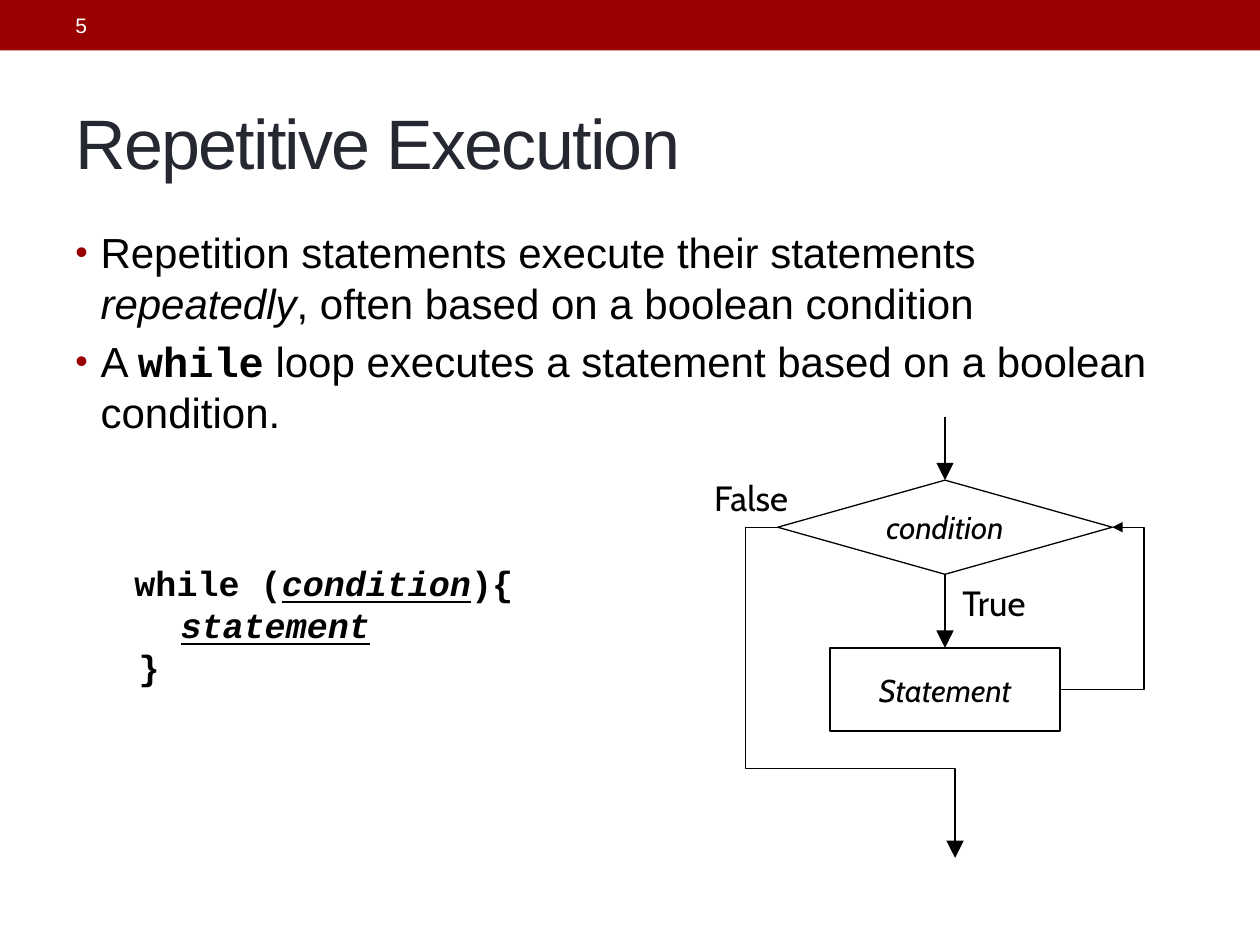
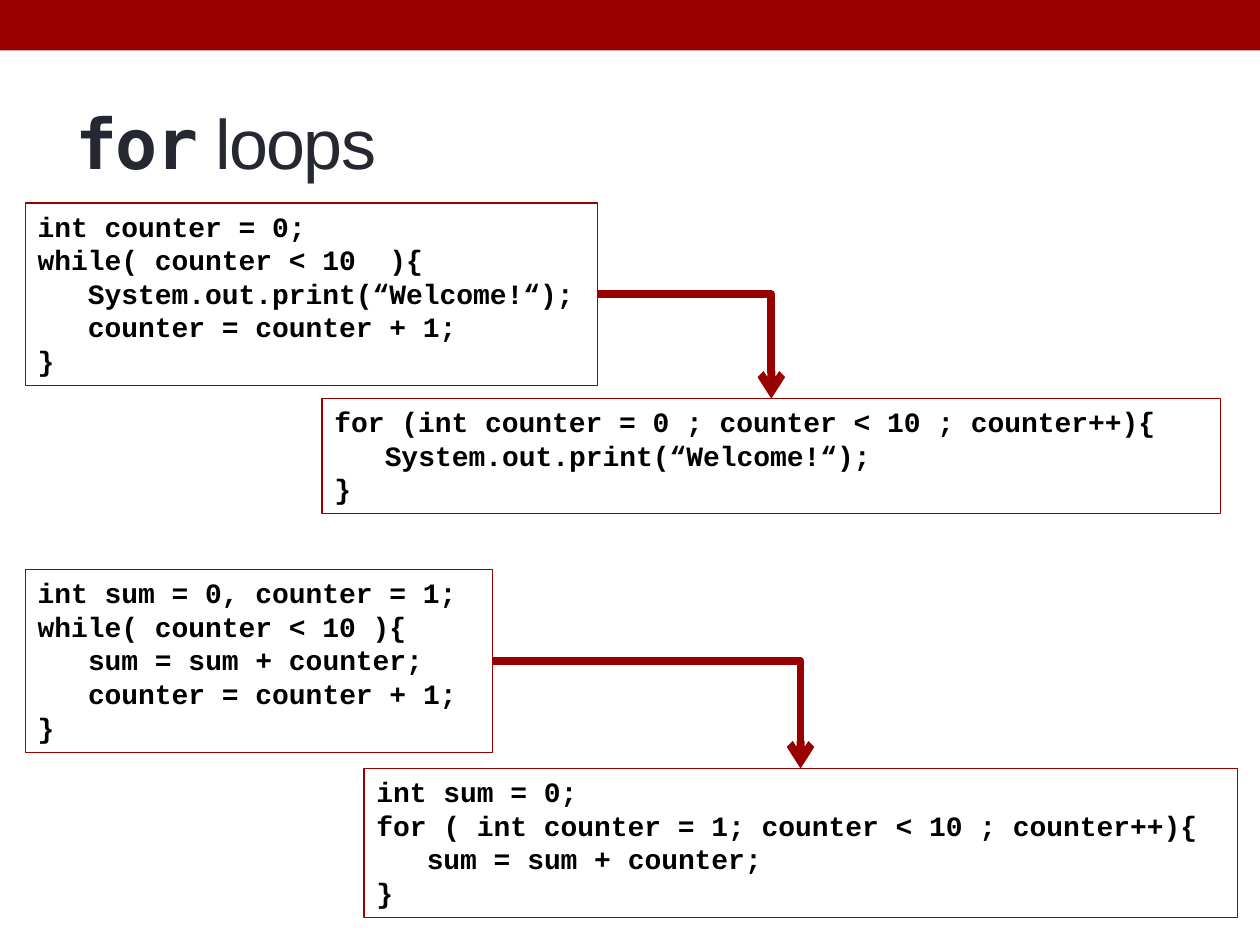
from dataclasses import dataclass
from typing import Any

import lxml.etree
import pptx
import pptx.dml.color
import pptx.enum.shapes
import pptx.enum.text
import pptx.oxml.ns
import pptx.util

Pt = pptx.util.Pt
qn = pptx.oxml.ns.qn
SHAPE = pptx.enum.shapes.MSO_SHAPE
LINK = pptx.enum.shapes.MSO_CONNECTOR
ALIGN = pptx.enum.text.PP_ALIGN
ANCHOR = pptx.enum.text.MSO_ANCHOR
TOP, LEFT, BOTTOM, RIGHT = range(4)


@dataclass(frozen=True)
class Theme:
    red: str = "990000"
    ink: str = "252731"
    black: str = "000000"
    white: str = "FFFFFF"
    sans: str = "Arial"
    mono: str = "Courier New"
    label: str = "Cabin"
    head: str = "DejaVu Sans Mono"
    title: int = 40
    body: int = 24
    large: int = 20
    node: int = 18
    code: int = 16
    page: int = 12
    thin: float = 0.75
    thick: float = 4.5


@dataclass(frozen=True)
class Box:
    left: float
    top: float
    width: float
    height: float

    def args(self) -> tuple:
        return tuple(Pt(v) for v in (self.left, self.top, self.width, self.height))


@dataclass(frozen=True)
class Run:
    text: str
    font: str | None = None
    bold: bool | None = None
    italic: bool | None = None
    under: bool | None = None


@dataclass(frozen=True)
class Code:
    """A framed listing; each line is (indent level, text)."""
    box: Box
    lines: tuple[tuple[int, str], ...]


THEME = Theme()
STEP = 28.8  # three characters of code

PAIRS = (
    (
        Code(Box(14.4, 116, 327, 104.4), (
            (0, "int counter = 0;"),
            (0, "while( counter < 10  ){"),
            (1, "System.out.print(“Welcome!“);"),
            (1, "counter = counter + 1;"),
            (0, "}"))),
        Code(Box(184, 227.8, 513.5, 65.5), (
            (0, "for (int counter = 0 ; counter < 10 ; counter++){"),
            (1, "System.out.print(“Welcome!“);"),
            (0, "}"))),
    ),
    (
        Code(Box(14.4, 325.5, 267, 104.4), (
            (0, "int sum = 0, counter = 1;"),
            (0, "while( counter < 10 ){"),
            (1, "sum = sum + counter;"),
            (1, "counter = counter + 1;"),
            (0, "}"))),
        Code(Box(208, 439.2, 499, 85), (
            (0, "int sum = 0;"),
            (0, "for ( int counter = 1; counter < 10 ; counter++){"),
            (1, "sum = sum + counter;"),
            (0, "}"))),
    ),
)


def tint(value: str) -> pptx.dml.color.RGBColor:
    return pptx.dml.color.RGBColor.from_string(value)


def style(font: Any, name: str, size: float, color: str = THEME.black) -> None:
    font.name, font.size = name, Pt(size)
    font.color.rgb = tint(color)


def write(para: Any, *runs: Run) -> None:
    for item in runs:
        run = para.add_run()
        run.text = item.text
        if item.font:
            run.font.name = item.font
        run.font.bold, run.font.italic = item.bold, item.italic
        run.font.underline = item.under


def indent(para: Any, left: float, first: float = 0) -> Any:
    props = para._p.get_or_add_pPr()
    props.set("marL", str(Pt(left)))
    props.set("indent", str(Pt(first)))
    return props


def bullet(para: Any) -> None:
    props = indent(para, 14.4, -14.4)
    color = lxml.etree.SubElement(props, qn("a:buClr"))
    lxml.etree.SubElement(color, qn("a:srgbClr"), val=THEME.red)
    lxml.etree.SubElement(props, qn("a:buSzPct"), val="85000")
    lxml.etree.SubElement(props, qn("a:buFont"), typeface=THEME.sans)
    lxml.etree.SubElement(props, qn("a:buChar"), char="•")


def textbox(slide: Any, box: Box, wrap: bool = True, middle: bool = False) -> Any:
    frame = slide.shapes.add_textbox(*box.args()).text_frame
    frame.word_wrap = wrap
    frame.vertical_anchor = ANCHOR.MIDDLE if middle else ANCHOR.TOP
    return frame


def block(slide: Any, kind: Any, box: Box, fill: str | None, line: str | None) -> Any:
    shape = slide.shapes.add_shape(kind, *box.args())
    shape.shadow.inherit = False
    if fill:
        shape.fill.solid()
        shape.fill.fore_color.rgb = tint(fill)
    else:
        shape.fill.background()
    if line:
        stroke(shape, line, THEME.thin)
    else:
        shape.line.fill.background()
    return shape


def stroke(shape: Any, color: str, width: float) -> None:
    shape.line.color.rgb = tint(color)
    shape.line.width = Pt(width)


def tip(shape: Any, kind: str = "triangle", size: str = "lg") -> None:
    line = shape.element.spPr.find(qn("a:ln"))
    lxml.etree.SubElement(line, qn("a:tailEnd"), type=kind, w=size, len=size)


def link(slide: Any, kind: Any, color: str, width: float,
         start: tuple[float, float] = (0, 0), end: tuple[float, float] = (0, 0)) -> Any:
    line = slide.shapes.add_connector(kind, *(Pt(v) for v in start + end))
    stroke(line, color, width)
    lxml.etree.SubElement(line.element.spPr, qn("a:effectLst"))
    return line


def bend(line: Any, preset: str, **guides: float) -> None:
    """Choose the elbow form and place its bends as shares of its size."""
    shape = line.element.spPr.find(qn("a:prstGeom"))
    shape.set("prst", preset)
    for old in list(shape):
        shape.remove(old)
    values = lxml.etree.SubElement(shape, qn("a:avLst"))
    for name, share in guides.items():
        lxml.etree.SubElement(values, qn("a:gd"), name=name,
                              fmla=f"val {round(share * 100000)}")


def start(deck: Any, *title: Run) -> Any:
    """Add a blank slide with the red band and its title."""
    slide = deck.slides.add_slide(deck.slide_layouts[6])
    block(slide, SHAPE.RECTANGLE, Box(0, 0, 720, 28.8), THEME.red, None)
    para = textbox(slide, Box(36, 41.8, 648, 77.8), middle=True).paragraphs[0]
    style(para.font, THEME.sans, THEME.title, THEME.ink)
    write(para, *title)
    for run in para.runs:
        run.font._element.set("spc", "-100")
    return slide


def node(slide: Any, kind: Any, box: Box, text: str) -> Any:
    shape = block(slide, kind, box, THEME.white, THEME.black)
    frame = shape.text_frame
    frame.word_wrap, frame.vertical_anchor = False, ANCHOR.MIDDLE
    para = frame.paragraphs[0]
    para.alignment = ALIGN.CENTER
    style(para.font, THEME.label, THEME.node)
    para.font.italic = True
    write(para, Run(text))
    return shape


def chart(slide: Any) -> None:
    """Draw the flow of a while loop."""
    test = node(slide, SHAPE.DIAMOND, Box(444.4, 274.4, 191.2, 53.8), "condition")
    work = node(slide, SHAPE.RECTANGLE, Box(474.2, 370.2, 131.6, 47.6), "Statement")

    enter = link(slide, LINK.STRAIGHT, THEME.black, THEME.thin, (540, 238.4), (540, 274.4))
    enter.end_connect(test, TOP)
    tip(enter)

    down = link(slide, LINK.STRAIGHT, THEME.black, THEME.thin)
    down.begin_connect(test, BOTTOM)
    down.end_connect(work, TOP)
    tip(down)

    back = link(slide, LINK.ELBOW, THEME.black, THEME.thin)
    back.begin_connect(work, RIGHT)
    back.end_connect(test, RIGHT)
    bend(back, "bentConnector3", adj1=(653.8 - 605.8) / (635.6 - 605.8))
    tip(back, size="med")

    route = ((444.4, 301.3), (426.2, 301.3), (426.2, 439.2), (545.8, 439.2), (545.8, 490.3))
    first, *rest = [(Pt(x), Pt(y)) for x, y in route]
    pen = slide.shapes.build_freeform(*first)
    pen.add_line_segments(rest, close=False)
    leave = pen.convert_to_shape()
    leave.shadow.inherit = False
    leave.fill.background()
    stroke(leave, THEME.black, THEME.thin)
    tip(leave)

    for text, box in (("False", Box(401, 268.6, 59, 31)), ("True", Box(542.9, 328.6, 54.7, 31))):
        para = textbox(slide, box, wrap=False, middle=True).paragraphs[0]
        style(para.font, THEME.label, THEME.large)
        write(para, Run(text))


def repeat(deck: Any) -> None:
    slide = start(deck, Run("Repetitive Execution"))
    page = textbox(slide, Box(36, 1.4, 228, 26), middle=True).paragraphs[0]
    style(page.font, THEME.sans, THEME.page, THEME.white)
    write(page, Run("5"))

    points = (
        (Run("Repetition statements execute their statements "),
         Run("repeatedly", italic=True),
         Run(", often based on a boolean condition")),
        (Run("A "), Run("while", THEME.mono, bold=True),
         Run(" loop executes a statement based on a boolean condition.")),
    )
    frame = textbox(slide, Box(36, 126, 648, 132))
    for i, runs in enumerate(points):
        para = frame.add_paragraph() if i else frame.paragraphs[0]
        para.space_before = Pt(4.8)
        style(para.font, THEME.sans, THEME.body)
        bullet(para)
        write(para, *runs)

    syntax = (
        (21.6, (Run("while ("), Run("condition", italic=True, under=True), Run("){"))),
        (48, (Run("statement", italic=True, under=True),)),
        (24, (Run("}"),)),
    )
    frame = textbox(slide, Box(48.2, 317.5, 396, 80))
    for i, (left, runs) in enumerate(syntax):
        para = frame.add_paragraph() if i else frame.paragraphs[0]
        style(para.font, THEME.mono, THEME.large)
        para.font.bold = True
        indent(para, left)
        write(para, *runs)
    chart(slide)


def listing(slide: Any, code: Code) -> Any:
    shape = block(slide, SHAPE.RECTANGLE, code.box, None, THEME.red)
    frame = shape.text_frame
    frame.word_wrap, frame.vertical_anchor = True, ANCHOR.TOP
    for i, (level, text) in enumerate(code.lines):
        para = frame.add_paragraph() if i else frame.paragraphs[0]
        para.alignment = ALIGN.LEFT
        style(para.font, THEME.mono, THEME.code)
        para.font.bold = True
        indent(para, level * STEP)
        write(para, Run(text))
    return shape


def loops(deck: Any) -> None:
    slide = start(deck, Run("for", THEME.head, bold=True), Run(" loops"))
    for pair in PAIRS:
        old, new = (listing(slide, code) for code in pair)
        arrow = link(slide, LINK.ELBOW, THEME.red, THEME.thick)
        arrow.begin_connect(old, RIGHT)
        arrow.end_connect(new, TOP)
        bend(arrow, "bentConnector2")
        tip(arrow, "arrow", "med")


def main() -> None:
    deck = pptx.Presentation()
    deck.slide_width, deck.slide_height = Pt(720), Pt(540)
    repeat(deck)
    loops(deck)
    deck.save("out.pptx")


if __name__ == "__main__":
    main()
